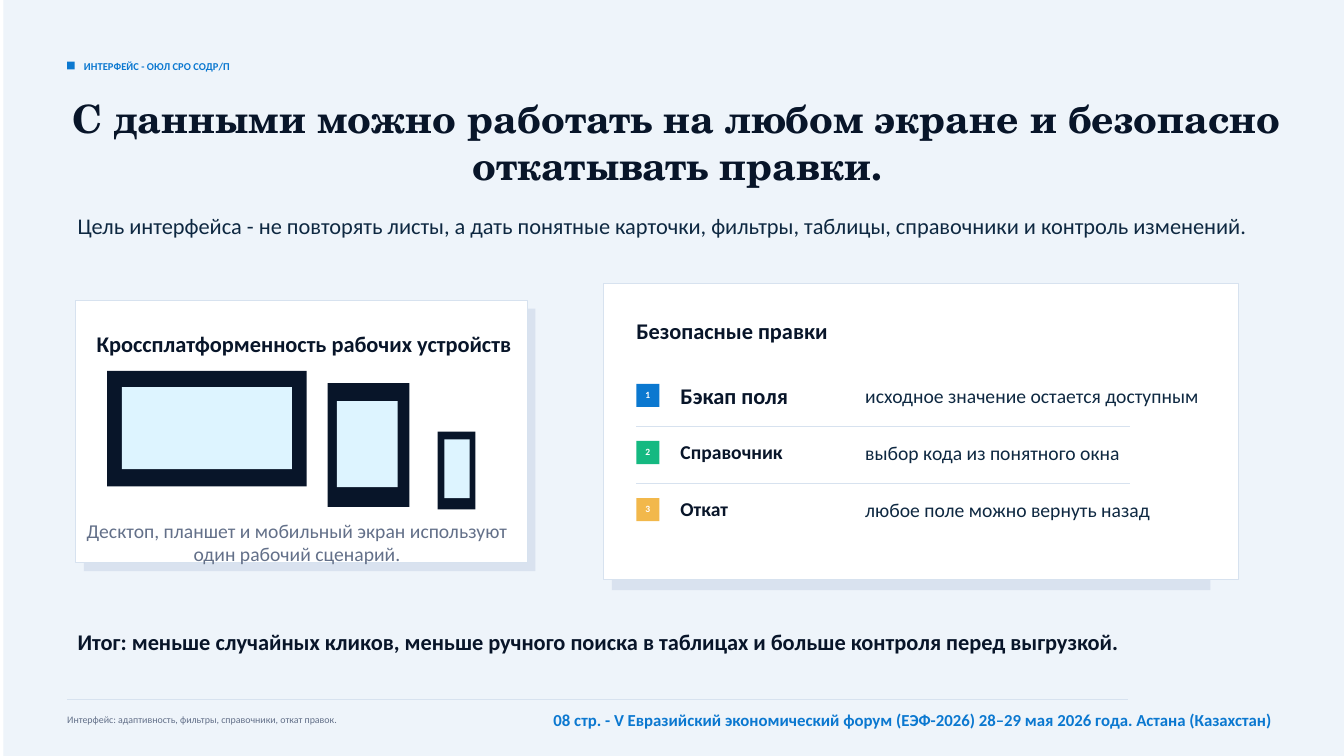
import pptx
import pptx.util
import pptx.dml.color
import pptx.enum.shapes
import pptx.enum.text
import lxml.etree

RGB = pptx.dml.color.RGBColor
NAVY = RGB(0x08, 0x15, 0x29)
INK = RGB(0x0E, 0x28, 0x41)
GREY = RGB(0x63, 0x70, 0x89)
BLUE = RGB(0x0B, 0x78, 0xD0)
GREEN = RGB(0x15, 0xB9, 0x81)
AMBER = RGB(0xF2, 0xB8, 0x4B)
PALE = RGB(0xEE, 0xF4, 0xFA)
SHADE = RGB(0xD9, 0xE2, 0xEF)
EDGE = RGB(0xD7, 0xE2, 0xEF)
SCREEN = RGB(0xDD, 0xF4, 0xFF)
WHITE = RGB(0xFF, 0xFF, 0xFF)
LEFT = pptx.enum.text.PP_ALIGN.LEFT
CENTER = pptx.enum.text.PP_ALIGN.CENTER
RIGHT = pptx.enum.text.PP_ALIGN.RIGHT
COLS, ROWS = 160, 90

prs = pptx.Presentation()
prs.slide_width = pptx.util.Inches(13.33)
prs.slide_height = pptx.util.Inches(7.5)
s = prs.slides.add_slide(prs.slide_layouts[5])
cw, rh = prs.slide_width / COLS, prs.slide_height / ROWS


def rect(x, y, w, h, fill, line=None):
    sp = s.shapes.add_shape(pptx.enum.shapes.MSO_SHAPE.RECTANGLE,
                            int(x * cw), int(y * rh), int(w * cw), int(h * rh))
    sp.shadow.inherit = False
    sp.fill.solid()
    sp.fill.fore_color.rgb = fill
    if line is None:
        sp.line.fill.background()
    else:
        sp.line.color.rgb = line
        sp.line.width = pptx.util.Pt(0.75)
    return sp


def text(x, y, w, h, words, size, color, bold=False, align=LEFT, font="Calibri", sp=None):
    if sp is None:
        sp = s.shapes.add_textbox(0, 0, 0, 0)
    sp.left, sp.top, sp.width, sp.height = int(x * cw), int(y * rh), int(w * cw), int(h * rh)
    tf = sp.text_frame
    tf.margin_left = tf.margin_right = tf.margin_top = tf.margin_bottom = 0
    tf.word_wrap = True
    tf.auto_size = pptx.enum.text.MSO_AUTO_SIZE.NONE
    tf.vertical_anchor = pptx.enum.text.MSO_ANCHOR.TOP
    p = tf.paragraphs[0]
    p.alignment = align
    p.line_spacing = 1.0
    r = p.add_run()
    r.text = words
    r.font.name = font
    r.font.size = pptx.util.Pt(size)
    r.font.bold = bold
    r.font.color.rgb = color


bg = rect(0.4, 0, COLS, ROWS, PALE)
bg.element.getparent().insert(2, bg.element)

rect(8, 7.35, 0.9, 0.9, BLUE)
text(10, 7.1, 45, 2.25, "ИНТЕРФЕЙС - ОЮЛ СРО СОДР/П", 7.5, BLUE, True)
text(8, 11.25, 145.25, 11.25,
     "С данными можно работать на любом экране и безопасно откатывать правки.",
     27.8, NAVY, True, CENTER, "TeX Gyre Schola", s.shapes.title)
text(9.25, 25.25, 140, 6,
     "Цель интерфейса - не повторять листы, а дать понятные карточки, фильтры, "
     "таблицы, справочники и контроль изменений.", 16, INK)

rect(10, 36.75, 53.75, 31.25, SHADE)
rect(9, 35.75, 53.75, 31.25, WHITE, EDGE)
text(11.5, 39.25, 50.75, 2.75, "Кроссплатформенность рабочих устройств", 16, NAVY, True)
devices = [
    ((12.75, 44.15, 23.75, 13.75), (14.5, 46.1, 20.25, 9.75)),
    ((39, 45.6, 9.75, 14.75), (40.1, 47.75, 7.25, 10.25)),
    ((52.1, 51.4, 4.5, 9.25), (52.9, 52.3, 3, 7)),
]
for body, screen in devices:
    rect(*body, NAVY)
    rect(*screen, SCREEN)
text(10, 61.75, 50.75, 4,
     "Десктоп, планшет и мобильный экран используют один рабочий сценарий.",
     14, GREY, align=CENTER)

rect(72.85, 35, 71.25, 35.25, SHADE)
rect(71.9, 33.7, 75.5, 35.25, WHITE, EDGE)
text(75.75, 37.8, 28.75, 3, "Безопасные правки", 16, NAVY, True)
edits = [
    ("Бэкап поля", 16, "исходное значение остается доступным", BLUE),
    ("Справочник", 14, "выбор кода из понятного окна", GREEN),
    ("Откат", 14, "любое поле можно вернуть назад", AMBER),
]
top, step = 45.7, 6.8
for i, (name, size, note, color) in enumerate(edits):
    y = top + i * step
    rect(75.75, y, 2.75, 2.75, color)
    text(76.5, y + 0.6, 1.25, 1.25, str(i + 1), 6.8, WHITE, True, CENTER)
    text(81, y - 0.15, 21.25, 2.5, name, size, NAVY, True)
    text(103, y, 40, 2.75, note, 14, INK)

rules = [(75.75, top + 5.1, 58.75), (75.75, top + step + 5.1, 58.75), (8, 83.3, 126.25)]
for x, y, w in rules:
    ln = s.shapes.add_connector(pptx.enum.shapes.MSO_CONNECTOR.STRAIGHT,
                                int(x * cw), int(y * rh), int((x + w) * cw), int(y * rh))
    ln.line.color.rgb = EDGE
    ln.line.width = pptx.util.Pt(0.75)
    lxml.etree.SubElement(ln.element.spPr,
                          "{http://schemas.openxmlformats.org/drawingml/2006/main}effectLst")

text(9.25, 74.75, 134, 3.75,
     "Итог: меньше случайных кликов, меньше ручного поиска в таблицах "
     "и больше контроля перед выгрузкой.", 16, NAVY, True)
text(8, 85, 95, 2.25, "Интерфейс: адаптивность, фильтры, справочники, откат правок.", 7.1, GREY)
text(56.5, 84.5, 95, 3,
     "08 стр. - V Евразийский экономический форум (ЕЭФ-2026) "
     "28–29 мая 2026 года. Астана (Казахстан)", 12, BLUE, True, RIGHT)

prs.save("out.pptx")
